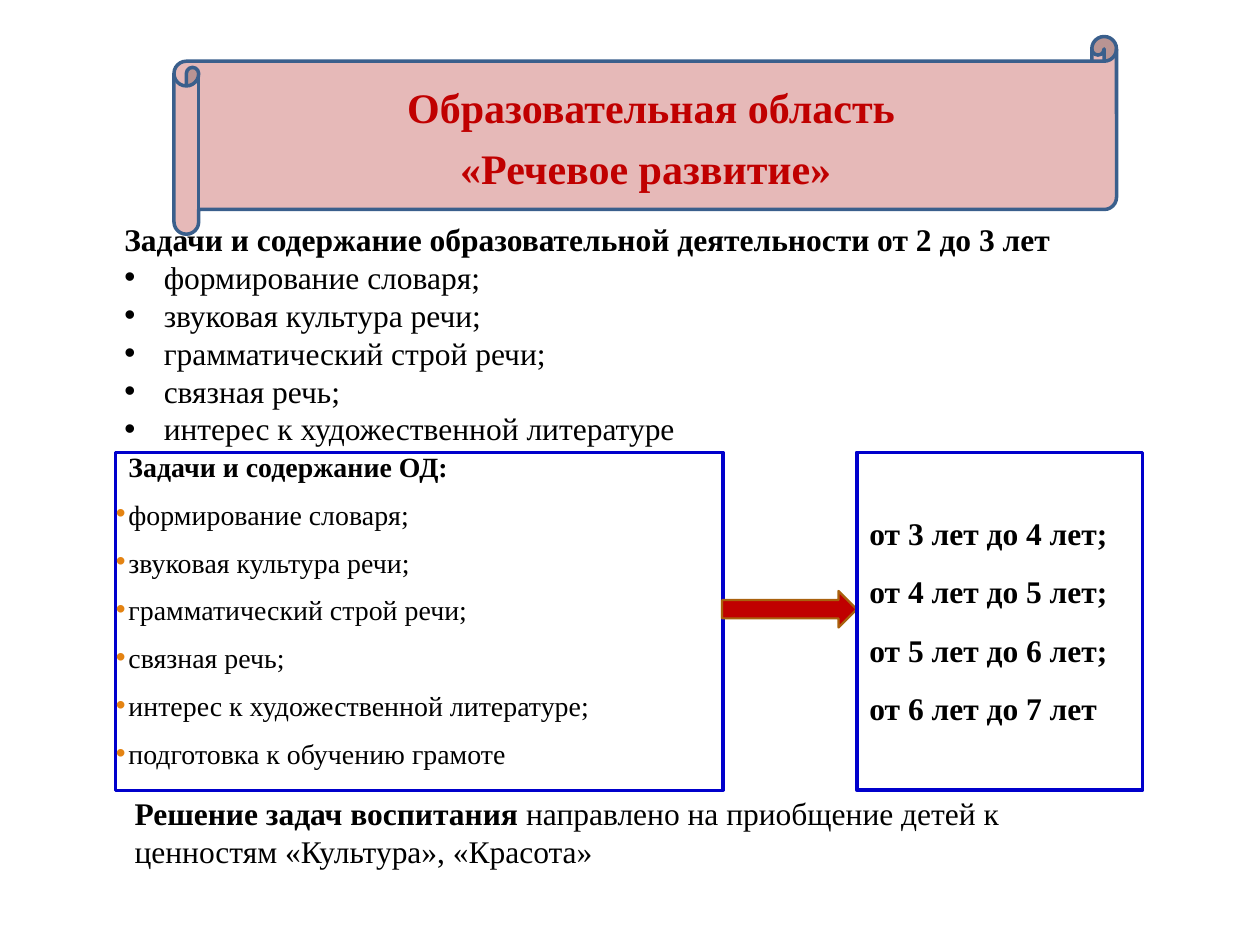
from lxml.etree import SubElement
from pptx import Presentation
from pptx.dml.color import RGBColor
from pptx.enum.shapes import MSO_SHAPE
from pptx.enum.text import MSO_ANCHOR, MSO_AUTO_SIZE, PP_ALIGN
from pptx.oxml.ns import qn
from pptx.util import Pt

COLORS = {"text": "000000", "red": "C00000", "scroll": "E6B9B8", "scroll_line": "3A5F8C",
          "frame": "0000CC", "bullet": "E48312", "arrow_line": "A9610D"}
TOPICS = ["формирование словаря;", "звуковая культура речи;", "грамматический строй речи;",
          "связная речь;", "интерес к художественной литературе"]
AGES = ["от 3 лет до 4 лет;", "от 4 лет до 5 лет;", "от 5 лет до 6 лет;", "от 6 лет до 7 лет"]
FRAME_TOP, FRAME_HEIGHT = 258.5, 193
SPACED = {"space_before": Pt(12), "space_after": Pt(2)}


def color(name):
    """Return the named colour."""
    return RGBColor.from_string(COLORS[name])


def set_attrs(obj, values):
    """Set every attribute in the dict on the object."""
    for name, value in values.items():
        setattr(obj, name, value)


def set_frame(tf, **values):
    """Wrap the text frame and set its margins and anchor."""
    set_attrs(tf, {"word_wrap": True, "vertical_anchor": MSO_ANCHOR.TOP, **values})


def add_shape(s, kind, box, line, width, fill=None):
    """Add a flat preset shape with the given line and fill."""
    sp = s.shapes.add_shape(kind, *map(Pt, box))
    sp.shadow.inherit = False
    sp.line.color.rgb, sp.line.width = color(line), Pt(width)
    if fill:
        sp.fill.solid()
        sp.fill.fore_color.rgb = color(fill)
    else:
        sp.fill.background()
    return sp


def set_indent(p, left, bullet=False, bullet_color="text"):
    """Indent the paragraph and hang a round bullet if wanted."""
    pPr = p._p.get_or_add_pPr()
    pPr.set("marL", str(Pt(left)))
    pPr.set("indent", str(-Pt(left) if bullet else 0))
    if bullet:
        SubElement(SubElement(pPr, qn("a:buClr")), qn("a:srgbClr"), val=COLORS[bullet_color])
        SubElement(pPr, qn("a:buFont"), typeface="Arial")
        SubElement(pPr, qn("a:buChar"), char="•")


def add_paragraph(tf, runs, size, ink="text", indent=None, **layout):
    """Fill the first empty paragraph or a new one with (text, bold) runs."""
    first = not tf.text
    p = tf.paragraphs[0] if first else tf.add_paragraph()
    if indent:
        set_indent(p, *indent)
    set_attrs(p, {"alignment": PP_ALIGN.LEFT, **layout})
    if first:
        p.space_before = Pt(0)
    for text, bold in runs:
        r = p.add_run()
        r.text = text
        set_attrs(r.font, {"name": "Times New Roman", "size": Pt(size), "bold": bold})
        r.font.color.rgb = color(ink)


def add_text_box(s, box):
    """Add a wrapping text box and return its text frame."""
    tf = s.shapes.add_textbox(*map(Pt, box)).text_frame
    set_frame(tf)
    return tf


def add_framed_box(s, left, width, line_width, margin_top=3.6):
    """Add a blue frame and return its text frame."""
    box = (left, FRAME_TOP, width, FRAME_HEIGHT)
    tf = add_shape(s, MSO_SHAPE.RECTANGLE, box, "frame", line_width).text_frame
    set_frame(tf, margin_left=0, margin_right=0, margin_top=Pt(margin_top))
    return tf


def add_title(s):
    """Draw the scroll and place the title on it."""
    add_shape(s, MSO_SHAPE.HORIZONTAL_SCROLL, (99.4, 20.9, 538.6, 113),
              "scroll_line", 2, "scroll")
    title = s.shapes.title
    set_attrs(title, dict(zip(("left", "top", "width", "height"),
                              map(Pt, (113.5, 36, 517, 85)))))
    s.shapes._spTree.append(title._element)
    tf = title.text_frame
    set_frame(tf, auto_size=MSO_AUTO_SIZE.NONE, vertical_anchor=MSO_ANCHOR.MIDDLE)
    for text in ("Образовательная область", "«Речевое развитие» "):
        add_paragraph(tf, [(text, True)], 24, "red",
                      alignment=PP_ALIGN.CENTER, space_before=Pt(6))


def main():
    """Build the slide and save it."""
    prs = Presentation()
    prs.slide_width, prs.slide_height = Pt(720), Pt(540)
    s = prs.slides.add_slide(prs.slide_layouts[5])

    tf = add_text_box(s, (64, 122.4, 590, 138))
    heading = "Задачи и содержание образовательной деятельности от 2 до 3 лет"
    add_paragraph(tf, [(heading, True)], 18)
    for topic in TOPICS:
        add_paragraph(tf, [(topic, False)], 18, indent=(22.5, True))

    tf = add_framed_box(s, 66.2, 347, 1.75)
    add_paragraph(tf, [("Задачи и содержание ОД:", True)], 15.9, indent=(7.2,),
                  line_spacing=0.7, **SPACED)
    for topic in TOPICS[:-1] + [TOPICS[-1] + ";", "подготовка к обучению грамоте"]:
        add_paragraph(tf, [(topic, False)], 15.9, indent=(7.2, True, "bullet"),
                      line_spacing=0.7, **SPACED)

    add_shape(s, MSO_SHAPE.RIGHT_ARROW, (412.6, 337.7, 77, 20.9), "arrow_line", 1.25, "red")

    tf = add_framed_box(s, 489.6, 163.4, 2, margin_top=37.5)
    for age in AGES:
        add_paragraph(tf, [(age, True)], 18, indent=(7.2,), line_spacing=0.9, **SPACED)

    tf = add_text_box(s, (69.8, 450, 583, 51))
    add_paragraph(tf, [("Решение задач воспитания ", True),
                       ("направлено на приобщение детей к ценностям «Культура», «Красота»",
                        False)], 18)
    add_title(s)
    prs.save("out.pptx")


if __name__ == "__main__":
    main()
